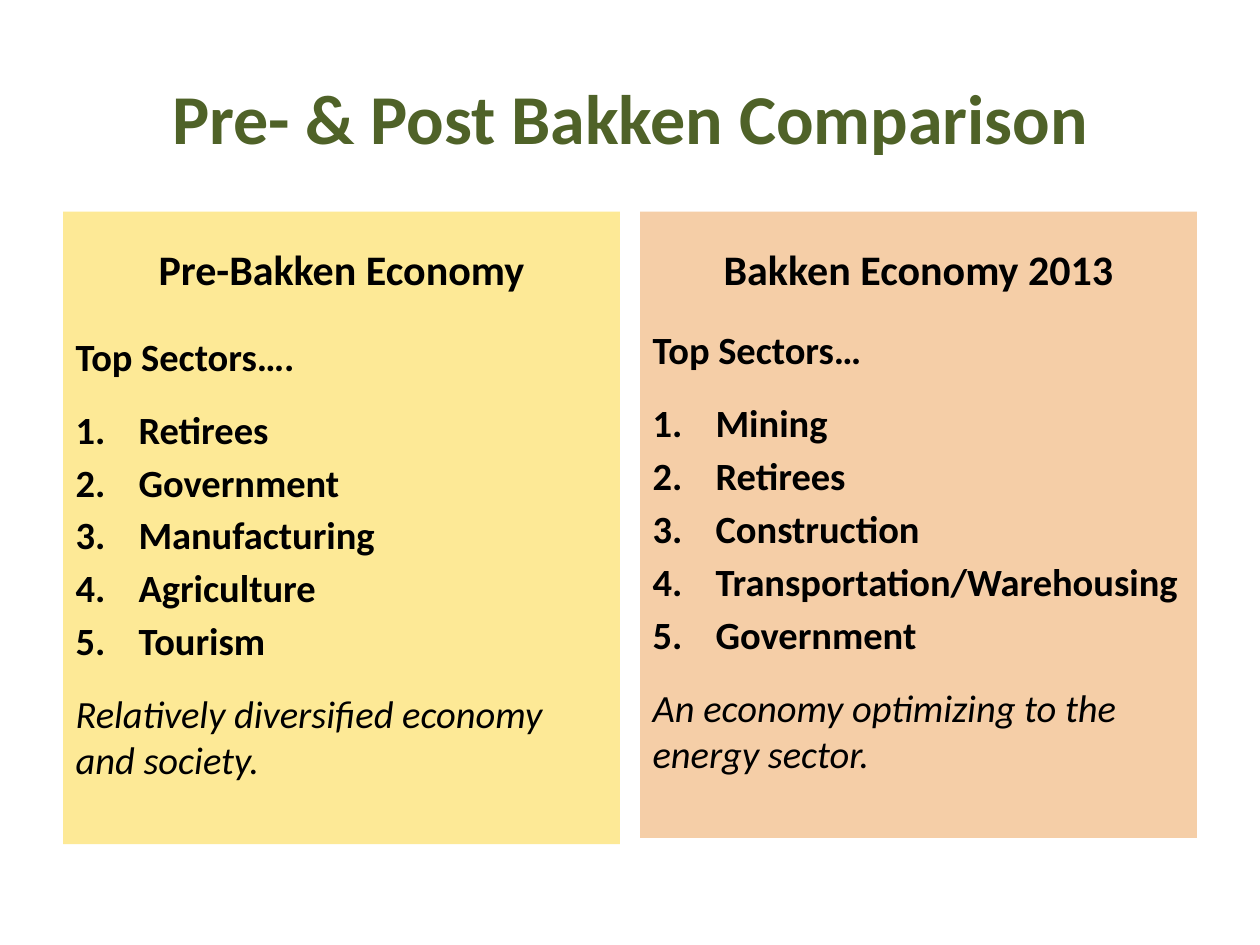
from lxml import etree
from pptx import Presentation
from pptx.dml.color import RGBColor
from pptx.enum.text import MSO_ANCHOR, MSO_AUTO_SIZE, PP_ALIGN
from pptx.oxml.ns import qn
from pptx.util import Inches, Pt

TOP, MID, LOW = MSO_ANCHOR.TOP, MSO_ANCHOR.MIDDLE, MSO_ANCHOR.BOTTOM
LEFT, CENTER = PP_ALIGN.LEFT, PP_ALIGN.CENTER
FIXED = MSO_AUTO_SIZE.NONE

COLORS = {"title": "4F6228", "text": "000000", "pre": "FDE996", "post": "F5CEA7"}
FONTS = {
    "title": {"name": "Calibri", "size": Pt(40), "bold": True, "italic": False},
    "head": {"name": "Calibri", "size": Pt(24), "bold": True, "italic": False},
    "item": {"name": "Calibri", "size": Pt(22), "bold": True, "italic": False},
    "note": {"name": "Calibri", "size": Pt(22), "bold": False, "italic": True},
}
WIDE, GAP = 4.42, 0.16
TIGHT, LOOSE = 3.8, 15.4

PANELS = [
    ("pre", "Pre-Bakken Economy", 2.38, "Top Sectors….",
     ["Retirees", "Government", "Manufacturing", "Agriculture", "Tourism"],
     "Relatively diversified economy and society."),
    ("post", "Bakken Economy 2013", 2.33, "Top Sectors…",
     ["Mining", "Retirees", "Construction", "Transportation/Warehousing", "Government"],
     "An economy optimizing to the energy sector."),
]


class Deck:
    def __init__(self):
        self.file = Presentation()
        self.file.slide_width, self.file.slide_height = Inches(10), Inches(7.5)
        self.slide = self.file.slides.add_slide(self.file.slide_layouts[4])

    def place(self, idx, box, anchor, fill=None):
        shape = self.slide.placeholders[idx]
        for key, value in zip(("left", "top", "width", "height"), box):
            setattr(shape, key, Inches(value))
        if fill:
            shape.fill.solid()
            shape.fill.fore_color.rgb = RGBColor.from_string(COLORS[fill])
        frame = shape.text_frame
        form = {"word_wrap": True, "auto_size": FIXED, "vertical_anchor": anchor}
        for key, value in form.items():
            setattr(frame, key, value)
        return frame

    def line(self, para, text, font, color="text", align=LEFT, before=0, number=False):
        para.text = text
        props = para._p.get_or_add_pPr()
        indent = Inches(0.5) if number else 0
        props.set("marL", str(indent))
        props.set("indent", str(-indent))
        if number:
            etree.SubElement(props, qn("a:buFont"), typeface="+mj-lt")
            etree.SubElement(props, qn("a:buAutoNum"), type="arabicPeriod")
        else:
            etree.SubElement(props, qn("a:buNone"))
        para.alignment = align
        para.space_before = Pt(before)
        run = para.runs[0].font
        for key, value in FONTS[font].items():
            setattr(run, key, value)
        run.color.rgb = RGBColor.from_string(COLORS[color])

    def title(self, text):
        frame = self.place(0, (0.5, 0.3, 9, 1.25), MID)
        self.line(frame.paragraphs[0], text, "title", "title", CENTER)

    def head(self, idx, left, text, fill):
        frame = self.place(idx, (left, 1.68, WIDE, 0.7), LOW, fill)
        self.line(frame.paragraphs[0], text, "head", align=CENTER)

    def body(self, idx, left, top, fill, lead, items, note):
        frame = self.place(idx, (left, top, WIDE, 4.32), TOP, fill)
        frame.margin_top = Inches(0.26)
        self.line(frame.paragraphs[0], lead, "item")
        for pos, item in enumerate(items):
            self.line(frame.add_paragraph(), item, "item",
                      before=TIGHT if pos else LOOSE, number=True)
        self.line(frame.add_paragraph(), note, "note", before=LOOSE)


def main():
    deck = Deck()
    deck.title("Pre- & Post Bakken Comparison")
    for col, (fill, head, top, lead, items, note) in enumerate(PANELS):
        left = 0.5 + col * (WIDE + GAP)
        deck.head(1 + 2 * col, left, head, fill)
        deck.body(2 + 2 * col, left, top, fill, lead, items, note)
    deck.file.save("out.pptx")


if __name__ == "__main__":
    main()
